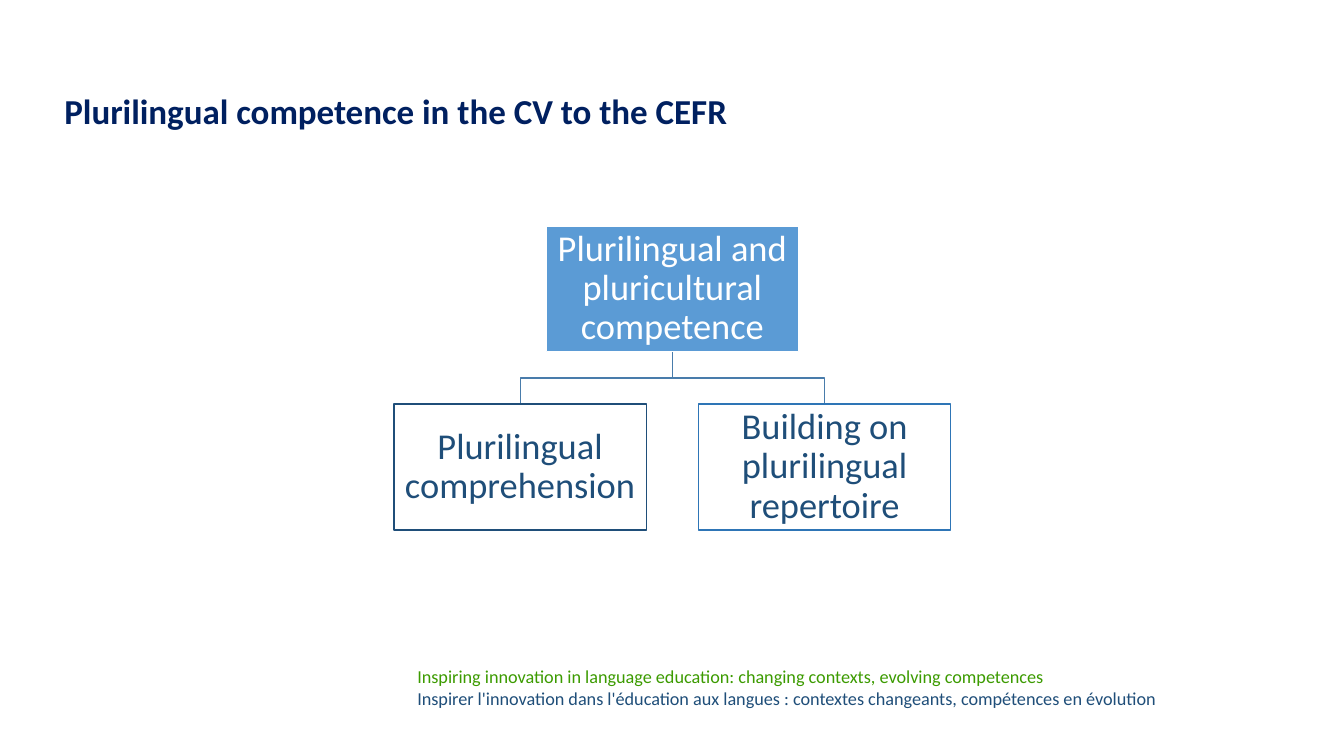
from dataclasses import dataclass

from pptx import Presentation
from pptx.dml.color import RGBColor
from pptx.enum.shapes import MSO_SHAPE
from pptx.enum.text import MSO_ANCHOR, PP_ALIGN
from pptx.util import Inches, Pt

RECTANGLE = MSO_SHAPE.RECTANGLE
MIDDLE, TOP = MSO_ANCHOR.MIDDLE, MSO_ANCHOR.TOP
CENTER, LEFT = PP_ALIGN.CENTER, PP_ALIGN.LEFT

COLORS = {
    "navy": "002060",
    "blue": "5B9BD5",
    "dark_blue": "1F4E79",
    "mid_blue": "2E75B6",
    "branch": "497CAB",
    "green": "3C9B00",
    "white": "FFFFFF",
}
FONT_NAME = "Calibri"

# Slide and tree grid, in inches
SLIDE_WIDTH, SLIDE_HEIGHT = 13.33, 7.5
COLUMN_PITCH, ROW_PITCH = 1.51, 1.77
BOX_WIDTH, BOX_HEIGHT = 2.5, 1.25
TREE_CENTER, TREE_TOP = 6.67, 2.24
BOX_INSET = 0.02


@dataclass(frozen=True)
class Node:
    text: str
    column: int  # steps from the centre line
    row: int
    line: str
    text_color: str
    fill: str | None = None

    @property
    def center(self) -> float:
        return TREE_CENTER + self.column * COLUMN_PITCH

    @property
    def top(self) -> float:
        return TREE_TOP + self.row * ROW_PITCH


@dataclass(frozen=True)
class TextBlock:
    lines: tuple[tuple[str, str], ...]  # text and colour name
    area: tuple[float, float, float, float]
    size: float
    bold: bool = False
    anchor: MSO_ANCHOR = TOP
    spacing: float = 1.0


ROOT = Node("Plurilingual and pluricultural competence", 0, 0,
            "white", "white", "blue")
CHILDREN = (
    Node("Plurilingual comprehension", -1, 1, "dark_blue", "dark_blue"),
    Node("Building on plurilingual repertoire", 1, 1, "mid_blue", "dark_blue"),
)
TITLE = TextBlock((("Plurilingual competence in the CV to the CEFR", "navy"),),
                  (0.54, 0.4, 12.27, 1.45), 25, True, MIDDLE, 0.9)
FOOTER = TextBlock(
    (("Inspiring innovation in language education: "
      "changing contexts, evolving competences", "green"),
     ("Inspirer l'innovation dans l'éducation aux langues : "
      "contextes changeants, compétences en évolution", "dark_blue")),
    (4.04, 6.55, 7.92, 0.54), 13)


def color(name: str) -> RGBColor:
    return RGBColor.from_string(COLORS[name])


def apply(target, values: dict) -> None:
    for attribute, value in values.items():
        setattr(target, attribute, value)


def write_text(shape, lines, size, bold, anchor, alignment, spacing) -> None:
    frame = shape.text_frame
    apply(frame, {"word_wrap": True, "vertical_anchor": anchor})
    paragraph = frame.paragraphs[0]
    apply(paragraph, {"alignment": alignment, "line_spacing": spacing})
    for index, (text, color_name) in enumerate(lines):
        if index:
            paragraph.add_line_break()
        run = paragraph.add_run()
        run.text = text
        apply(run.font, {"name": FONT_NAME, "size": Pt(size), "bold": bold})
        run.font.color.rgb = color(color_name)


def set_outline(shape, color_name: str) -> None:
    shape.shadow.inherit = False
    shape.line.color.rgb = color(color_name)
    shape.line.width = Pt(1)


def draw_text(slide, block: TextBlock) -> None:
    shape = slide.shapes.add_textbox(*map(Inches, block.area))
    write_text(shape, block.lines, block.size, block.bold, block.anchor,
               LEFT, block.spacing)


def draw_branch(slide, parent: Node, child: Node) -> None:
    start = parent.top + BOX_HEIGHT
    bend = (start + child.top) / 2
    points = ((parent.center, bend), (child.center, bend),
              (child.center, child.top))
    builder = slide.shapes.build_freeform(Inches(parent.center), Inches(start))
    builder.add_line_segments([(Inches(x), Inches(y)) for x, y in points],
                              close=False)
    branch = builder.convert_to_shape()
    branch.fill.background()
    set_outline(branch, "branch")


def draw_node(slide, node: Node) -> None:
    area = (node.center - BOX_WIDTH / 2, node.top, BOX_WIDTH, BOX_HEIGHT)
    box = slide.shapes.add_shape(RECTANGLE, *map(Inches, area))
    if node.fill:
        box.fill.solid()
        box.fill.fore_color.rgb = color(node.fill)
    else:
        box.fill.background()
    set_outline(box, node.line)
    sides = ("left", "top", "right", "bottom")
    apply(box.text_frame,
          {f"margin_{side}": Inches(BOX_INSET) for side in sides})
    write_text(box, ((node.text, node.text_color),), 26, False, MIDDLE,
               CENTER, 0.9)


def main() -> None:
    presentation = Presentation()
    presentation.slide_width = Inches(SLIDE_WIDTH)
    presentation.slide_height = Inches(SLIDE_HEIGHT)
    slide = presentation.slides.add_slide(presentation.slide_layouts[6])

    # Footer and title
    for block in (FOOTER, TITLE):
        draw_text(slide, block)

    # Competence tree
    for child in reversed(CHILDREN):
        draw_branch(slide, ROOT, child)
    for node in (ROOT, *CHILDREN):
        draw_node(slide, node)

    presentation.save("out.pptx")


if __name__ == "__main__":
    main()
